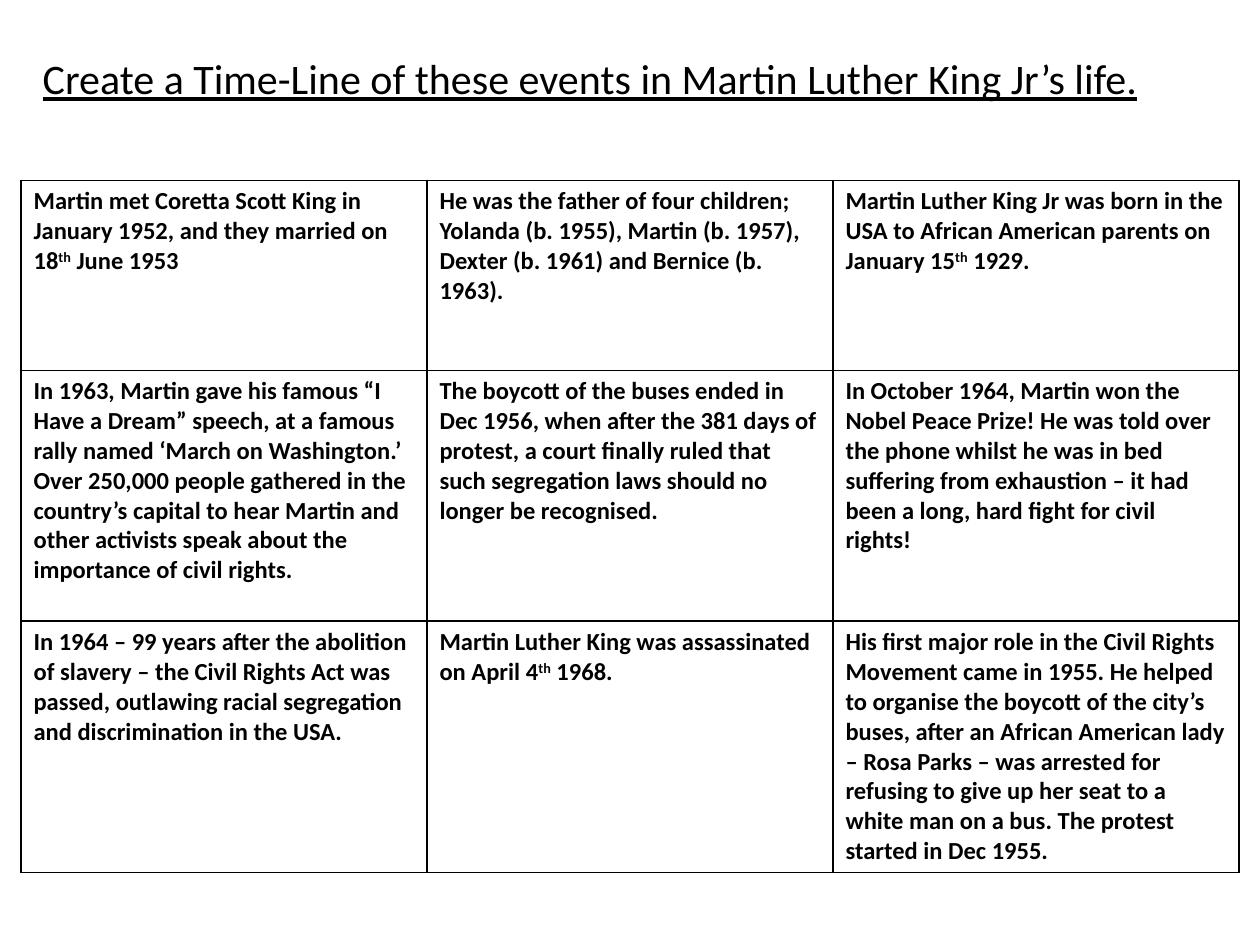
from lxml import etree
from pptx import Presentation, util as u
from pptx.dml.color import RGBColor
from pptx.enum import text
from pptx.oxml import ns

EVENTS = [
    ["Martin met Coretta Scott King in January 1952, and they married on 18^th^ June 1953",
     "He was the father of four children; Yolanda (b. 1955), Martin (b. 1957), "
     "Dexter (b. 1961) and Bernice (b. 1963).",
     "Martin Luther King Jr was born in the USA to African American parents on "
     "January 15^th^ 1929."],
    ["In 1963, Martin gave his famous “I Have a Dream” speech, at a famous rally named "
     "‘March on Washington.’ Over 250,000 people gathered in the country’s capital to hear "
     "Martin and other activists speak about the importance of civil rights.",
     "The boycott of the buses ended in Dec 1956, when after the 381 days of protest, "
     "a court finally ruled that such segregation laws should no longer be recognised.",
     "In October 1964, Martin won the Nobel Peace Prize! He was told over the phone whilst "
     "he was in bed suffering from exhaustion – it had been a long, hard fight for civil rights!"],
    ["In 1964 – 99 years after the abolition of slavery – the Civil Rights Act was passed, "
     "outlawing racial segregation and discrimination in the USA.",
     "Martin Luther King was assassinated on April 4^th^ 1968.",
     "His first major role in the Civil Rights Movement came in 1955. He helped to organise "
     "the boycott of the city’s buses, after an African American lady – Rosa Parks – was "
     "arrested for refusing to give up her seat to a white man on a bus. "
     "The protest started in Dec 1955."],
]


def colour(value):
    return RGBColor.from_string(value)


class SlideBuilder:
    """Hold the style and the current slide, and add each kind of element."""

    font_name = "Calibri"
    ink = "000000"
    border_width = 1

    def __init__(self, page):
        self.page = page

    def add_spans(self, para, content, **style):
        formats = {"name": self.font_name, **style}
        for index, part in enumerate(content.split("^")):
            span = para.add_run()
            span.text = part
            for name, value in formats.items():
                setattr(span.font, name, value)
            span.font.color.rgb = colour(self.ink)
            if index % 2:
                span.font._element.set("baseline", "30000")

    def title(self, left, top, width, height, content):
        box = self.page.shapes.add_textbox(*map(u.Pt, (left, top, width, height)))
        frame = box.text_frame
        frame.word_wrap = True
        frame.auto_size = text.MSO_AUTO_SIZE.SHAPE_TO_FIT_TEXT
        self.add_spans(frame.paragraphs[0], content, size=u.Pt(24), underline=True)

    def border(self, cell):
        properties = cell._tc.get_or_add_tcPr()
        for side in ("lnL", "lnR", "lnT", "lnB"):
            line = etree.SubElement(properties, ns.qn(f"a:{side}"), w=str(u.Pt(self.border_width)))
            fill = etree.SubElement(line, ns.qn("a:solidFill"))
            etree.SubElement(fill, ns.qn("a:srgbClr"), val=self.ink)

    def table(self, left, top, width, heights, rows):
        places = map(u.Pt, (left, top, width, sum(heights)))
        grid = self.page.shapes.add_table(len(rows), len(rows[0]), *places).table
        grid.first_row = grid.horz_banding = False
        for row, height, contents in zip(grid.rows, heights, rows):
            row.height = u.Pt(height)
            for cell, content in zip(row.cells, contents):
                self.border(cell)
                cell.fill.background()
                self.add_spans(cell.text_frame.paragraphs[0], content, size=u.Pt(14), bold=True)


def main():
    deck = Presentation()
    deck.slide_width, deck.slide_height = u.Pt(720), u.Pt(540)
    builder = SlideBuilder(deck.slides.add_slide(deck.slide_layouts[6]))
    builder.table(12, 103, 696, [108.6, 143.4, 143.4], EVENTS)
    builder.title(17.3, 26.6, 671, 36,
                  "Create a Time-Line of these events in Martin Luther King Jr’s life.")
    deck.save("out.pptx")


if __name__ == "__main__":
    main()
